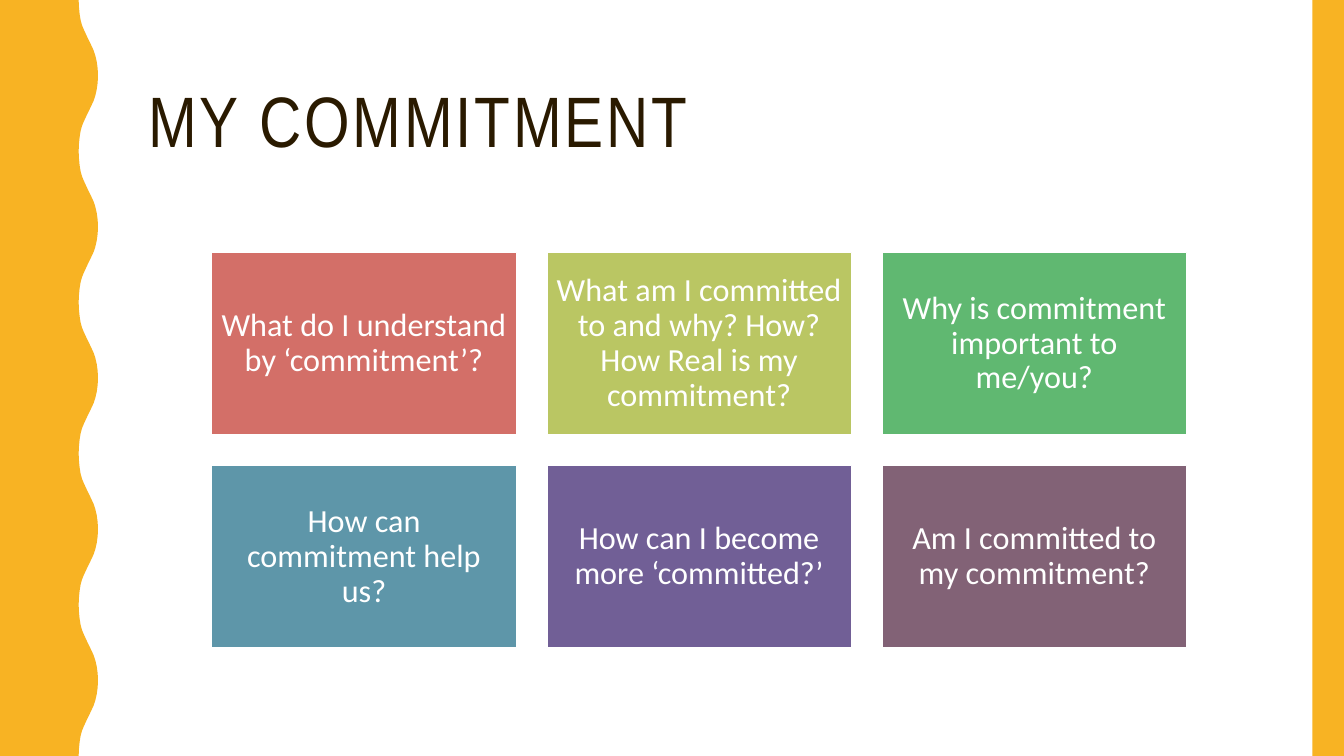
from pptx import Presentation
from pptx.dml.color import RGBColor
from pptx.enum.shapes import MSO_SHAPE
from pptx.enum.text import MSO_ANCHOR, MSO_AUTO_SIZE, PP_ALIGN
from pptx.util import Pt

RECTANGLE = MSO_SHAPE.RECTANGLE
MIDDLE = MSO_ANCHOR.MIDDLE
NO_AUTOFIT = MSO_AUTO_SIZE.NONE
LEFT, CENTER = PP_ALIGN.LEFT, PP_ALIGN.CENTER

SLIDE_WIDTH, SLIDE_HEIGHT = 960, 540
WAVE_PERIOD, WAVE_COUNT = 108, 5
RISING_WAVE = [
    (56.2, 0), (56.4, 5), (56.9, 10), (57.6, 14.4), (58.6, 18),
    (59.8, 21), (61.2, 24), (62.6, 27), (64.1, 30), (65.5, 33),
    (66.9, 36), (68.1, 39.6), (69.1, 44), (69.8, 49), (70, 54),
]
QUESTIONS = [
    ("What do I understand by ‘commitment’?", "D36F68"),
    ("What am I committed to and why? How? How Real is my commitment?", "BAC663"),
    ("Why is commitment important to me/you?", "60B871"),
    ("How can commitment help us?", "5E96A9"),
    ("How can I become more ‘committed?’", "715F96"),
    ("Am I committed to my commitment?", "826276"),
]
COLUMNS = 3
GRID_LEFT, GRID_TOP = 151.3, 180.2
TILE_WIDTH, TILE_HEIGHT, TILE_GAP = 217.6, 130.5, 21.8


def color(hex_code):
    return RGBColor.from_string(hex_code)


def write(shape, text, *, font, size, ink, align=LEFT, margin=None, tracking=None):
    frame = shape.text_frame
    frame.word_wrap = True
    frame.auto_size = NO_AUTOFIT
    frame.vertical_anchor = MIDDLE
    if margin is not None:
        frame.margin_left = frame.margin_right = Pt(margin)
        frame.margin_top = frame.margin_bottom = Pt(margin)
    paragraph = frame.paragraphs[0]
    paragraph.alignment = align
    paragraph.line_spacing = 0.9
    run = paragraph.add_run()
    run.text = text
    run.font.name = font
    run.font.size = Pt(size)
    run.font.color.rgb = color(ink)
    if tracking is not None:
        run.font._element.set("spc", str(tracking * 100))


class CommitmentSlide:
    """Holds the style and the current slide, and draws its elements."""

    accent, ink, paper = "F8B323", "2A1A00", "FFFFFF"
    heading_font, body_font = "Arial Narrow", "Calibri"

    def __init__(self, deck):
        self.slide = deck.slides.add_slide(deck.slide_layouts[5])
        self.slide.background.fill.solid()
        self.slide.background.fill.fore_color.rgb = color(self.paper)

    def paint(self, shape, fill, outline=None):
        shape.shadow.inherit = False
        shape.fill.solid()
        shape.fill.fore_color.rgb = color(fill)
        if outline:
            shape.line.color.rgb = color(outline)
            shape.line.width = Pt(1)
        else:
            shape.line.fill.background()

    def title(self, text, left, top, width, height):
        heading = self.slide.shapes.title
        heading.left, heading.top = Pt(left), Pt(top)
        heading.width, heading.height = Pt(width), Pt(height)
        write(heading, text, font=self.heading_font, size=51, ink=self.ink, tracking=2)

    def wavy_edge(self):
        falling = [(x, WAVE_PERIOD - y) for x, y in reversed(RISING_WAVE[:-1])]
        outline = [
            (Pt(x), Pt(y + wave * WAVE_PERIOD))
            for wave in range(WAVE_COUNT)
            for x, y in RISING_WAVE + falling
        ]
        builder = self.slide.shapes.build_freeform(0, 0)
        builder.add_line_segments(outline + [(0, Pt(SLIDE_HEIGHT))], close=True)
        self.paint(builder.convert_to_shape(), self.accent)

    def block(self, left, top, width, height, fill, outline=None):
        block = self.slide.shapes.add_shape(
            RECTANGLE, Pt(left), Pt(top), Pt(width), Pt(height))
        self.paint(block, fill, outline)
        return block

    def question_tile(self, question, fill, left, top):
        tile = self.block(left, top, TILE_WIDTH, TILE_HEIGHT, fill, self.paper)
        write(tile, question, font=self.body_font, size=23, ink=self.paper,
              align=CENTER, margin=6.9)


def main():
    deck = Presentation()
    deck.slide_width, deck.slide_height = Pt(SLIDE_WIDTH), Pt(SLIDE_HEIGHT)
    page = CommitmentSlide(deck)
    page.title("MY COMMITMENT", 98.6, 30.2, 801.4, 117.4)
    page.wavy_edge()
    page.block(937.5, 0, 22.5, SLIDE_HEIGHT, page.accent)
    for index, (question, fill) in enumerate(QUESTIONS):
        row, column = divmod(index, COLUMNS)
        page.question_tile(question, fill,
                           GRID_LEFT + column * (TILE_WIDTH + TILE_GAP),
                           GRID_TOP + row * (TILE_HEIGHT + TILE_GAP))
    deck.save("out.pptx")


if __name__ == "__main__":
    main()
